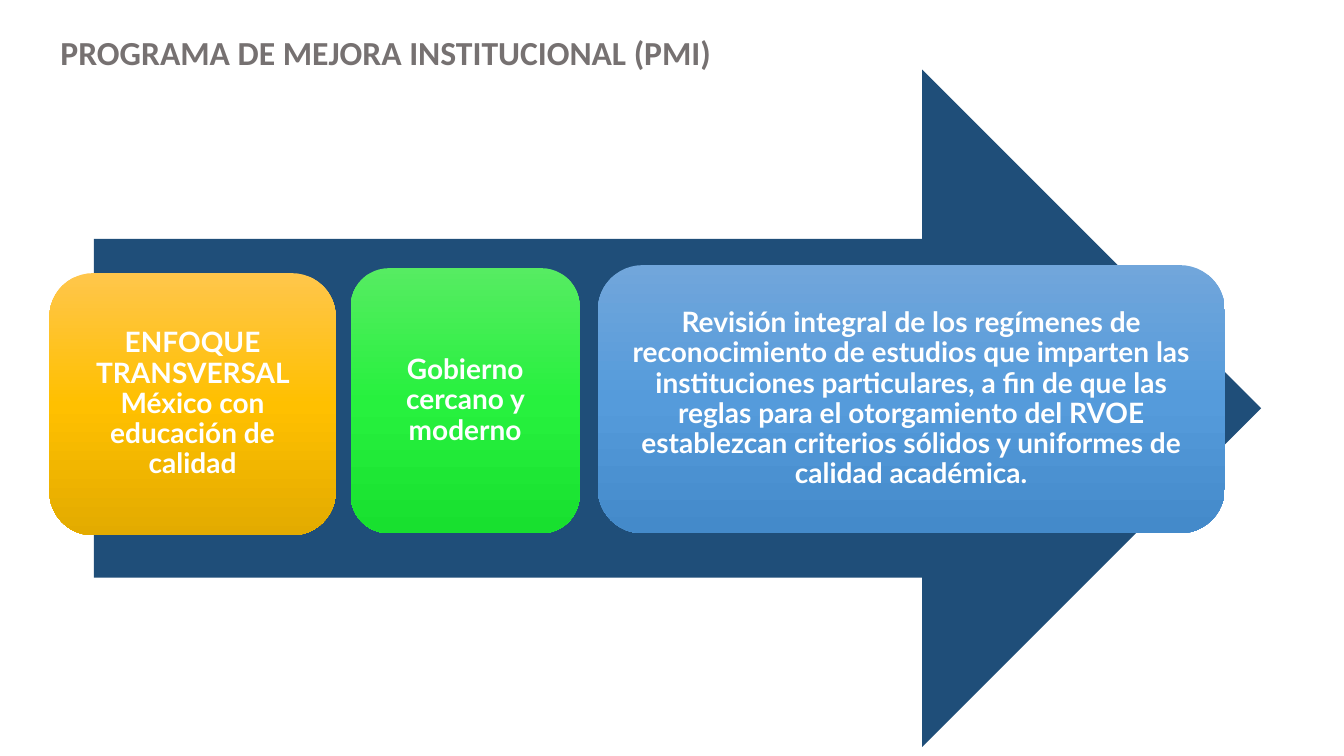
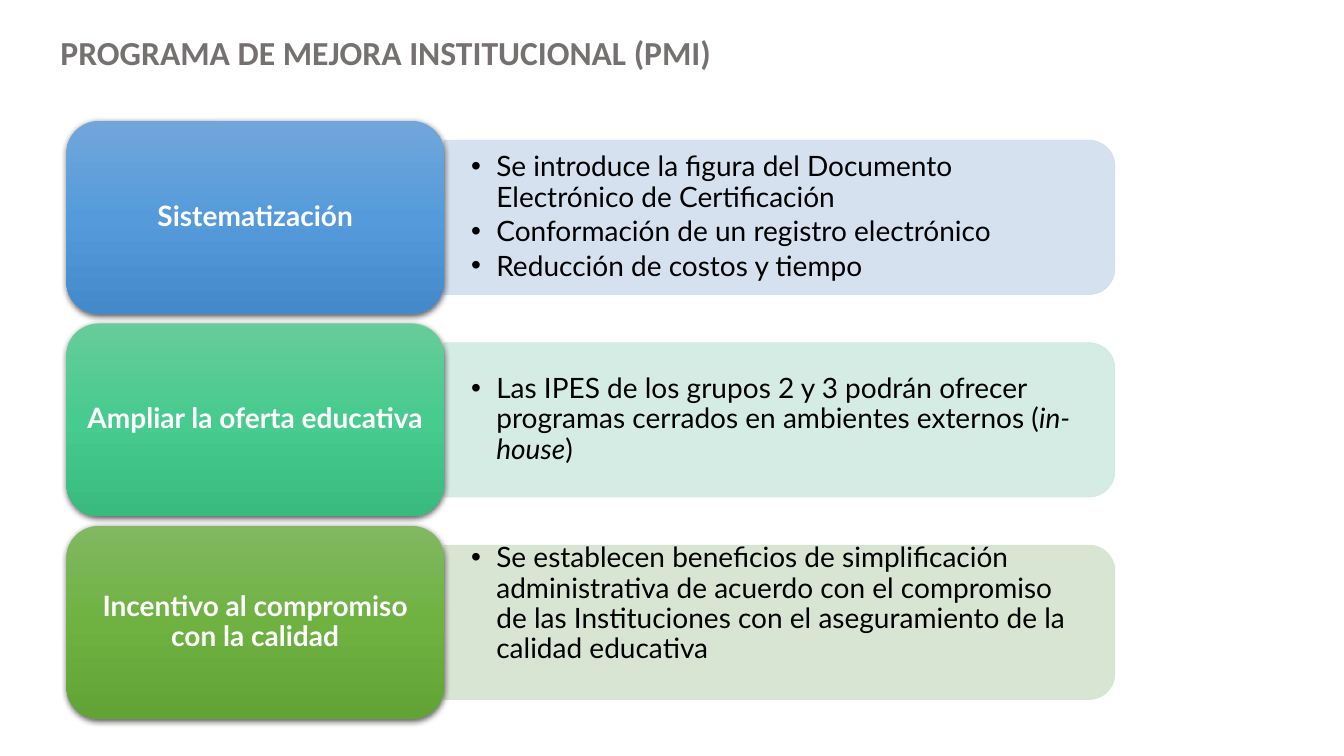
import copy
import dataclasses

import pptx
import pptx.dml.color
import pptx.enum.shapes
import pptx.enum.text
import pptx.oxml.ns
import pptx.util
from lxml import etree

SHAPES = pptx.enum.shapes.MSO_SHAPE
ALIGN = pptx.enum.text.PP_ALIGN
ANCHOR = pptx.enum.text.MSO_ANCHOR
qn = pptx.oxml.ns.qn

TITLE = "PROGRAMA DE MEJORA INSTITUCIONAL (PMI)"
TITLE_FONT, TEXT_FONT = "Calibri", "Lato"
GRAY, NAVY, WHITE, BLACK = "767171", "1F4E79", "FFFFFF", "000000"
AMBER = ("FFC64B", "FFC000", "E3AB00")
LIME = ("56EC62", "27F13E", "18E02F")
BLUE = ("71A6DB", "559BDB", "448ACA")
TEAL = ("67CC9A", "47CB8E", "39BB7F")
GREEN = ("81B861", "6FB242", "62A336")

STAGES = [
    ((3.68, 36.13, 21.3, 34.67), AMBER,
     "ENFOQUE TRANSVERSAL México con educación de calidad"),
    ((26.1, 35.47, 17.03, 35.07), LIME, "Gobierno cercano y moderno"),
    ((44.48, 35.07, 46.65, 35.47), BLUE,
     "Revisión integral de los regímenes de reconocimiento de estudios que "
     "imparten las instituciones particulares, a fin de que las reglas para "
     "el otorgamiento del RVOE establezcan criterios sólidos y uniformes de "
     "calidad académica."),
]
TOPICS = [
    ("Sistematización", BLUE, "D2DEEF", 0, [
        "Se introduce la figura del Documento Electrónico de Certificación",
        "Conformación de un registro electrónico",
        "Reducción de costos y tiempo"]),
    ("Ampliar la oferta educativa", TEAL, "D0EAE1", 0, [
        "Las IPES de los grupos 2 y 3 podrán ofrecer programas cerrados en "
        "ambientes externos (*in-house*)"]),
    ("Incentivo al compromiso con la calidad", GREEN, "D5E3CF", 9.4, [
        "Se establecen beneficios de simplificación administrativa de acuerdo "
        "con el compromiso de las Instituciones con el aseguramiento de la "
        "calidad educativa"]),
]


@dataclasses.dataclass
class Box:
    """A rectangle in inches, divided into 100 columns and 100 rows."""
    left: float
    top: float
    width: float
    height: float

    def inside(self, column, row, columns, rows):
        """Return the part of this box that covers the given cells."""
        return Box(self.left + self.width * column / 100,
                   self.top + self.height * row / 100,
                   self.width * columns / 100, self.height * rows / 100)

    def turned(self):
        """Return the box that covers this one after a quarter turn."""
        shift = (self.width - self.height) / 2
        return Box(self.left + shift, self.top - shift, self.height, self.width)

    def lengths(self):
        """Return left, top, width and height as slide lengths."""
        return [pptx.util.Inches(value) for value in dataclasses.astuple(self)]


PAGE = Box(0, 0, 13.33, 7.5)


def rgb(color):
    """Turn a hex string into a colour."""
    return pptx.dml.color.RGBColor.from_string(color)


def write_text(frame, paragraphs, *, size=20, font=TEXT_FONT, color=WHITE, bold=False,
               align=ALIGN.LEFT, anchor=ANCHOR.MIDDLE, insets=(0.08, 0.08),
               line_spacing=0.9, space_after=0, bullet=False):
    """Write paragraphs in a frame; text between asterisks is italic."""
    frame.word_wrap = True
    frame.auto_size = pptx.enum.text.MSO_AUTO_SIZE.NONE
    frame.vertical_anchor = anchor
    frame.margin_left = frame.margin_right = pptx.util.Inches(insets[0])
    frame.margin_top = frame.margin_bottom = pptx.util.Inches(insets[1])
    for index, text in enumerate(paragraphs):
        paragraph = frame.add_paragraph() if index else frame.paragraphs[0]
        if bullet:
            properties = paragraph._p.get_or_add_pPr()
            indent = pptx.util.Inches(0.25)
            properties.set("marL", str(indent))
            properties.set("indent", str(-indent))
            etree.SubElement(properties, qn("a:buFont")).set("typeface", "Arial")
            etree.SubElement(properties, qn("a:buChar")).set("char", "•")
        paragraph.alignment = align
        paragraph.line_spacing = line_spacing
        paragraph.space_before = pptx.util.Pt(0)
        paragraph.space_after = pptx.util.Pt(space_after)
        for part, words in enumerate(text.split("*")):
            run = paragraph.add_run()
            run.text = words
            run.font.size = pptx.util.Pt(size)
            run.font.name = font
            run.font.bold = bold
            run.font.italic = part % 2 == 1
            run.font.color.rgb = rgb(color)


def add_shape(slide, kind, box, color):
    """Add a flat shape without line or shadow."""
    shape = slide.shapes.add_shape(kind, *box.lengths())
    shape.shadow.inherit = False
    shape.fill.solid()
    shape.fill.fore_color.rgb = rgb(color)
    shape.line.fill.background()
    return shape


def add_card(slide, box, colors, text, insets=(0.08, 0.08)):
    """Add a rounded card with a vertical gradient and centred bold text."""
    card = add_shape(slide, SHAPES.ROUNDED_RECTANGLE, box, colors[0])
    card.fill.gradient()
    card.fill.gradient_angle = 270
    stop_list = card._element.spPr.find(".//" + qn("a:gsLst"))
    stop_list.append(copy.deepcopy(stop_list[0]))
    for stop, color, position in zip(card.fill.gradient_stops, colors, (0, 0.5, 1)):
        stop.color.rgb = rgb(color)
        stop.position = position
    write_text(card.text_frame, [text], bold=True, align=ALIGN.CENTER, insets=insets)
    return card


def add_soft_shadow(shape):
    """Give a shape a soft shadow below it."""
    effects = shape._element.spPr.find(qn("a:effectLst"))
    shadow = etree.SubElement(effects, qn("a:outerShdw"), blurRad="57150",
                              dist="19050", dir="5400000", algn="ctr", rotWithShape="0")
    color = etree.SubElement(shadow, qn("a:srgbClr"), val=BLACK)
    etree.SubElement(color, qn("a:alpha"), val="63000")


def add_panel(slide, box, color):
    """Add a translucent panel that is rounded on its right side."""
    panel = add_shape(slide, SHAPES.ROUND_2_SAME_RECTANGLE, box.turned(), color)
    panel.rotation = 90
    panel.line.color.rgb = rgb(color)
    panel.line.width = pptx.util.Pt(0.5)
    for element in panel._element.spPr.iter(qn("a:srgbClr")):
        etree.SubElement(element, qn("a:alpha"), val="90000")


def move_placeholder(slide, placeholder, box):
    """Place a placeholder in a box, in front of the shapes so far."""
    placeholder.left, placeholder.top, placeholder.width, placeholder.height = box.lengths()
    slide.shapes._spTree.append(placeholder._element)


def add_titled_slide(presentation, layout_name):
    """Add a slide with the shared title."""
    layout = presentation.slide_layouts.get_by_name(layout_name)
    slide = presentation.slides.add_slide(layout)
    title = slide.shapes.title
    move_placeholder(slide, title, PAGE.inside(3.75, 3.6, 72.4, 6.67))
    write_text(title.text_frame, [TITLE], size=24, font=TITLE_FONT, color=GRAY, bold=True,
               anchor=ANCHOR.TOP, insets=(0.1, 0.05), line_spacing=1)
    return slide


def add_topic(slide, box, placeholder, topic):
    """Add one row: a panel, its list and the label card."""
    label, colors, panel_color, lift, points = topic
    add_panel(slide, box.inside(36, 10, 64, 80), panel_color)
    move_placeholder(slide, placeholder, box.inside(36, 14 - lift, 63.3, 72))
    write_text(placeholder.text_frame, points, color=BLACK, insets=(0.27, 0.14),
               space_after=3, bullet=True)
    add_soft_shadow(add_card(slide, box.inside(0, 0, 36, 100), colors, label, (0.08, 0.04)))


def build_arrow_slide(presentation):
    """Build the slide with three cards on a wide arrow."""
    slide = add_titled_slide(presentation, "Title Only")
    add_shape(slide, SHAPES.RIGHT_ARROW, PAGE.inside(6.98, 9.2, 86.85, 89.6), NAVY)
    for cells, colors, text in STAGES:
        add_card(slide, PAGE.inside(*cells), colors, text)


def build_topics_slide(presentation):
    """Build the slide with one row for each topic."""
    slide = add_titled_slide(presentation, "Comparison")
    bodies = [shape for shape in slide.placeholders if shape.placeholder_format.idx]
    diagram = PAGE.inside(4.95, 16, 78, 79.07)
    gap = 0.05
    rows = 100 / (len(TOPICS) + gap * (len(TOPICS) - 1))
    for index, (body, topic) in enumerate(zip(bodies, TOPICS)):
        box = diagram.inside(0, index * rows * (1 + gap), 100, rows)
        add_topic(slide, box, body, topic)
    for unused in bodies[len(TOPICS):]:
        slide.shapes._spTree.remove(unused._element)


def main():
    """Build and save the presentation."""
    presentation = pptx.Presentation()
    presentation.slide_width = pptx.util.Inches(PAGE.width)
    presentation.slide_height = pptx.util.Inches(PAGE.height)
    build_arrow_slide(presentation)
    build_topics_slide(presentation)
    presentation.save("out.pptx")


if __name__ == "__main__":
    main()
